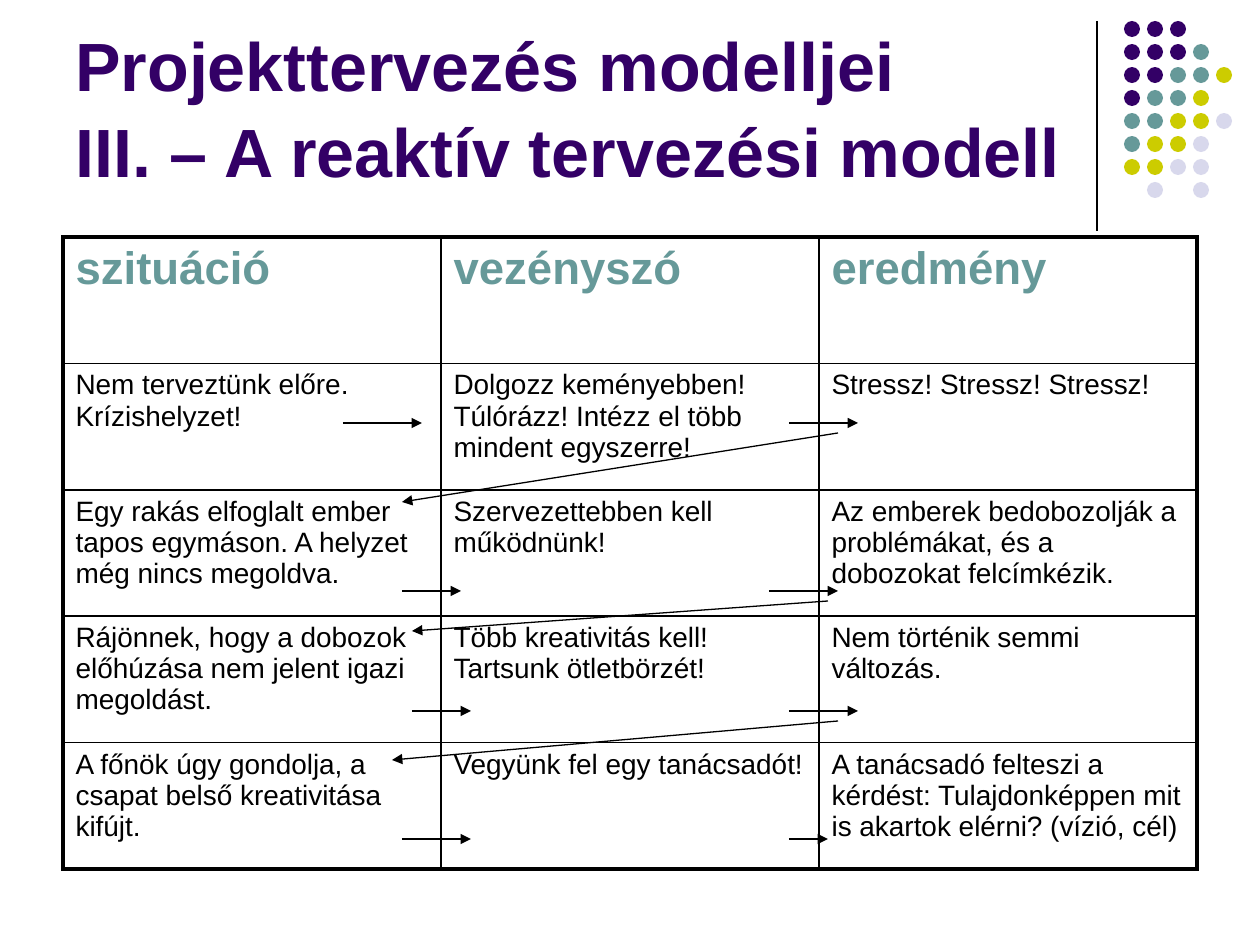
from dataclasses import dataclass

import pptx
import pptx.dml.color
import pptx.enum.shapes
import pptx.enum.text
import pptx.oxml.ns
import pptx.util
from lxml import etree

PX = 914400 / 126
FONT = "Arial"
COLORS = {
    "purple": "330066",
    "teal": "669999",
    "lime": "CCCC00",
    "lilac": "D8D8EC",
    "black": "000000",
}

TITLE = "Projekttervezés modelljei\vIII. – A reaktív tervezési modell"
ROWS = [
    ["szituáció", "vezényszó", "eredmény"],
    ["Nem terveztünk előre. Krízishelyzet!",
     "Dolgozz keményebben! Túlórázz! Intézz el több mindent egyszerre!",
     "Stressz! Stressz! Stressz!"],
    ["Egy rakás elfoglalt ember tapos egymáson. A helyzet még nincs megoldva.",
     "Szervezettebben kell működnünk!",
     "Az emberek bedobozolják a problémákat, és a dobozokat felcímkézik."],
    ["Rájönnek, hogy a dobozok előhúzása nem jelent igazi megoldást.",
     "Több kreativitás kell! Tartsunk ötletbörzét!",
     "Nem történik semmi változás."],
    ["A főnök úgy gondolja, a csapat belső kreativitása kifújt.",
     "Vegyünk fel egy tanácsadót!",
     "A tanácsadó felteszi a kérdést: Tulajdonképpen mit is akartok elérni? (vízió, cél)"],
]

# One letter per dot: purple, teal, lime, lilac (w), or a gap.
DOT_ROWS = ["ppp", "pppt", "ppttl", "pttl", "ttllw", "tllw", "llww", ".w.w"]
DOT_COLORS = {"p": "purple", "t": "teal", "l": "lime", "w": "lilac"}
DOT_LEFT, DOT_TOP, DOT_PITCH, DOT_SIZE = 1124, 21, 23, 16


@dataclass
class Line:
    x1: int
    y1: int
    x2: int
    y2: int
    arrow: bool = True


DIVIDER = Line(1097, 21, 1097, 231, arrow=False)
ARROWS = [
    Line(343, 423, 422, 423),
    Line(789, 423, 858, 423),
    Line(838, 433, 402, 502),
    Line(402, 591, 461, 591),
    Line(769, 591, 838, 591),
    Line(828, 601, 412, 631),
    Line(412, 711, 471, 711),
    Line(789, 711, 858, 711),
    Line(838, 721, 392, 760),
    Line(402, 839, 471, 839),
    Line(789, 839, 828, 839),
]


def px(n: int) -> int:
    return round(n * PX)


def rgb(name: str) -> pptx.dml.color.RGBColor:
    return pptx.dml.color.RGBColor.from_string(COLORS[name])


def sub(parent, tag: str, **attrs: str):
    return etree.SubElement(parent, pptx.oxml.ns.qn(tag), attrs)


def write(tf, text: str, *, size: int, color: str, bold: bool = False,
          spacing: float = 1.0) -> None:
    tf.word_wrap = True
    p = tf.paragraphs[0]
    p.text = text
    p.line_spacing = spacing
    p.alignment = pptx.enum.text.PP_ALIGN.LEFT
    for r in p.runs:
        r.font.name = FONT
        r.font.size = pptx.util.Pt(size)
        r.font.bold = bold
        r.font.color.rgb = rgb(color)


def draw_line(s, line: Line) -> None:
    cx = s.shapes.add_connector(
        pptx.enum.shapes.MSO_CONNECTOR.STRAIGHT,
        px(line.x1), px(line.y1), px(line.x2), px(line.y2))
    cx.line.color.rgb = rgb("black")
    cx.line.width = pptx.util.Pt(0.75)
    if line.arrow:
        sub(cx.line._get_or_add_ln(), "a:tailEnd", type="triangle")
    sub(cx._element.spPr, "a:effectLst")


def draw_dots(s) -> None:
    group = s.shapes.add_group_shape()
    for i, row in enumerate(DOT_ROWS):
        for j, letter in enumerate(row):
            if letter not in DOT_COLORS:
                continue
            sp = group.shapes.add_shape(
                pptx.enum.shapes.MSO_SHAPE.OVAL,
                px(DOT_LEFT + j * DOT_PITCH), px(DOT_TOP + i * DOT_PITCH),
                px(DOT_SIZE), px(DOT_SIZE))
            sp.shadow.inherit = False
            sp.fill.solid()
            sp.fill.fore_color.rgb = rgb(DOT_COLORS[letter])
            sp.line.fill.background()


def draw_title(s) -> None:
    tf = s.shapes.add_textbox(px(63), px(16), px(1039), px(179)).text_frame
    tf.vertical_anchor = pptx.enum.text.MSO_ANCHOR.BOTTOM
    tf.margin_bottom = px(4)
    write(tf, TITLE, size=39, color="purple", bold=True, spacing=1.05)


def set_borders(cell, outer: dict[str, bool]) -> None:
    """Give outer sides a thick line and inner sides a thin one."""
    tc_pr = cell._tc.get_or_add_tcPr()
    for side, is_outer in outer.items():
        width = pptx.util.Pt(2.25 if is_outer else 1)
        ln = sub(tc_pr, f"a:ln{side}", w=str(width))
        sub(sub(ln, "a:solidFill"), "a:srgbClr", val=COLORS["black"])


def draw_table(s) -> None:
    n_rows, n_cols = len(ROWS), len(ROWS[0])
    table = s.shapes.add_table(
        n_rows, n_cols, px(63), px(237), px(1134), px(632)).table
    table.first_row = table.horz_banding = False
    for i, row in enumerate(ROWS):
        for j, text in enumerate(row):
            cell = table.cell(i, j)
            set_borders(cell, {"L": j == 0, "R": j == n_cols - 1,
                               "T": i == 0, "B": i == n_rows - 1})
            cell.fill.background()
            if i == 0:
                write(cell.text_frame, text, size=26, color="teal", bold=True)
            else:
                write(cell.text_frame, text, size=16, color="black")


def main() -> None:
    prs = pptx.Presentation()
    prs.slide_width, prs.slide_height = px(1260), px(945)
    s = prs.slides.add_slide(prs.slide_layouts[6])
    draw_line(s, DIVIDER)
    draw_dots(s)
    draw_title(s)
    draw_table(s)
    for arrow in ARROWS:
        draw_line(s, arrow)
    prs.save("out.pptx")


if __name__ == "__main__":
    main()
